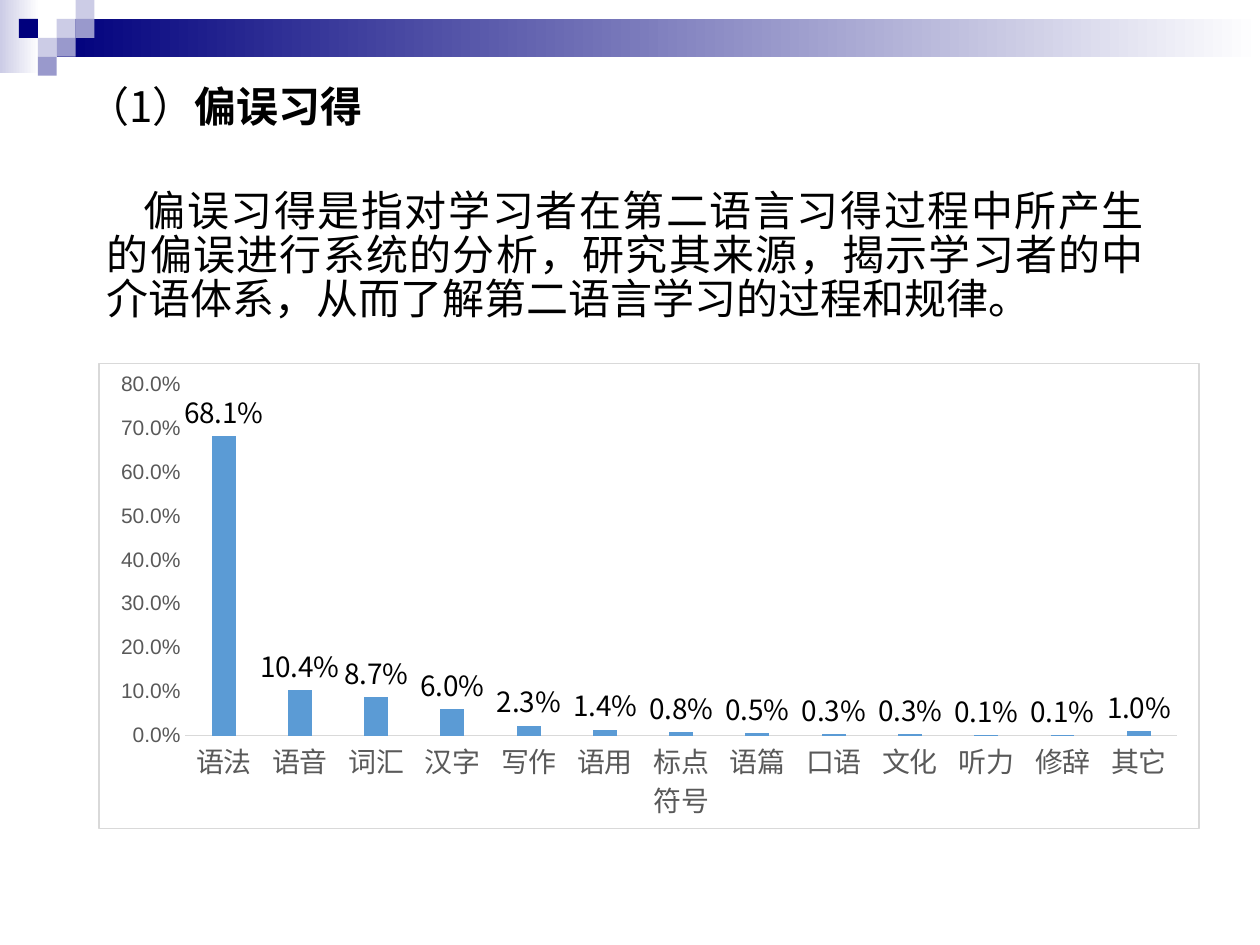
"""Build the slide on error acquisition with its column chart."""
from dataclasses import dataclass

from lxml import etree
from pptx import Presentation
from pptx import util as u
from pptx.chart.data import CategoryChartData
from pptx.dml.color import RGBColor
from pptx.enum import chart as charts, shapes, text
from pptx.oxml import parse_xml
from pptx.oxml.ns import qn


@dataclass(frozen=True)
class Theme:
    navy: str = "00007D"
    violet: str = "9999CC"
    lilac: str = "CCCCE6"
    white: str = "FFFFFF"
    ink: str = "000000"
    grey: str = "595959"
    rule: str = "D9D9D9"
    bar: str = "5B9BD5"
    han: str = "Noto Sans CJK SC"
    latin: str = "Arial"
    serif: str = "Times New Roman"
    body_size: int = 24
    label_size: int = 16
    axis_size: int = 12
    chart_size: int = 10


def style_font(font, size, color, face):
    font.size, font.name = u.Pt(size), face
    font.color.rgb = RGBColor.from_string(color)


def add_text(paragraph, content, *, size, color, face, bold=False):
    run = paragraph.add_run()
    run.text = content
    style_font(run.font, size, color, face)
    run.font.bold = bold
    east_asian = etree.SubElement(run.font._element, qn("a:ea"))
    east_asian.set("typeface", face)


class SlideBuilder:
    def __init__(self, slide, theme):
        self.slide, self.theme = slide, theme

    def rectangle(self, left, top, width, height, color, fade_to=None):
        shape = self.slide.shapes.add_shape(
            shapes.MSO_SHAPE.RECTANGLE, *map(u.Pt, (left, top, width, height)))
        shape.shadow.inherit = False
        shape.line.fill.background()
        if fade_to:
            shape.fill.gradient()
            shape.fill.gradient_angle = 0
            for stop, tone in zip(shape.fill.gradient_stops, (color, fade_to)):
                stop.color.rgb = RGBColor.from_string(tone)
        else:
            shape.fill.solid()
            shape.fill.fore_color.rgb = RGBColor.from_string(color)

    def text_box(self, left, top, width, height, runs, align=None, indent=0, spacing=None):
        box = self.slide.shapes.add_textbox(*map(u.Pt, (left, top, width, height)))
        box.text_frame.word_wrap = True
        paragraph = box.text_frame.paragraphs[0]
        paragraph.alignment = align
        if spacing:
            paragraph.line_spacing = u.Pt(spacing)
        if indent:
            paragraph._p.get_or_add_pPr().set("indent", str(u.Pt(indent)))
        for content, face, bold in runs:
            add_text(paragraph, content, size=self.theme.body_size,
                     color=self.theme.ink, face=face, bold=bold)

    def column_chart(self, left, top, width, height, shares):
        theme = self.theme
        data = CategoryChartData(number_format="0.0%")
        data.categories = list(shares)
        data.add_series("Series 1", list(shares.values()))
        chart = self.slide.shapes.add_chart(
            charts.XL_CHART_TYPE.COLUMN_CLUSTERED,
            *map(u.Pt, (left, top, width, height)), data).chart
        chart.has_legend = chart.has_title = False
        style_font(chart.font, theme.chart_size, theme.ink, theme.latin)
        self.chart_frame(chart)

        category, value = chart.category_axis, chart.value_axis
        for axis, size, face in ((category, theme.label_size, theme.han),
                                 (value, theme.axis_size, theme.latin)):
            axis.major_tick_mark = axis.minor_tick_mark = charts.XL_TICK_MARK.NONE
            axis.has_major_gridlines = False
            style_font(axis.tick_labels.font, size, theme.grey, face)
        category.format.line.color.rgb = RGBColor.from_string(theme.rule)
        category.format.line.width = u.Pt(0.75)
        value.format.line.fill.background()
        value.minimum_scale, value.maximum_scale, value.major_unit = 0, 0.8, 0.1
        value.tick_labels.number_format = "0.0%"
        value.tick_labels.number_format_is_linked = False

        plot = chart.plots[0]
        plot.gap_width, plot.vary_by_categories = 219, False
        series = plot.series[0]
        series.format.fill.solid()
        series.format.fill.fore_color.rgb = RGBColor.from_string(theme.bar)
        labels = series.data_labels
        labels.show_value = True
        labels.position = charts.XL_LABEL_POSITION.OUTSIDE_END
        labels.number_format, labels.number_format_is_linked = "0.0%", False
        style_font(labels.font, theme.label_size, theme.ink, theme.han)

    def chart_frame(self, chart):
        frame = parse_xml(
            '<c:spPr xmlns:c="http://schemas.openxmlformats.org/drawingml/2006/chart" '
            'xmlns:a="http://schemas.openxmlformats.org/drawingml/2006/main">'
            f'<a:solidFill><a:srgbClr val="{self.theme.white}"/></a:solidFill>'
            f'<a:ln w="{u.Pt(0.75)}"><a:solidFill><a:srgbClr val="{self.theme.rule}"/>'
            '</a:solidFill></a:ln></c:spPr>')
        chart.element.find(qn("c:chart")).addnext(frame)


def main():
    theme = Theme()
    presentation = Presentation()
    presentation.slide_width, presentation.slide_height = u.Pt(720), u.Pt(540)
    slide = presentation.slides.add_slide(presentation.slide_layouts[6])
    builder = SlideBuilder(slide, theme)

    builder.rectangle(0, 0, 22.5, 42, theme.lilac, fade_to=theme.white)
    builder.rectangle(32.4, 10.8, 687.6, 21.6, theme.navy, fade_to=theme.white)
    tile = 10.8
    tiles = ((3, 1, theme.lilac), (4, 0, theme.lilac), (4, 1, theme.violet),
             (2, 2, theme.lilac), (1, 1, theme.navy), (3, 2, theme.violet),
             (2, 3, theme.violet))
    for column, row, color in tiles:
        builder.rectangle(column * tile, row * tile, tile, tile, color)

    builder.text_box(
        54, 105.8, 607, 108,
        [("偏误习得是指对学习者在第二语言习得过程中所产生的偏误进行系统的分析，"
          "研究其来源，揭示学习者的中介语体系，从而了解第二语言学习的过程和规律。",
          theme.han, False)],
        align=text.PP_ALIGN.JUSTIFY, indent=21, spacing=25)
    builder.column_chart(56.2, 207.4, 629.3, 266.4, {
        "语法": 0.681, "语音": 0.104, "词汇": 0.087, "汉字": 0.06, "写作": 0.023,
        "语用": 0.014, "标点符号": 0.008, "语篇": 0.005, "口语": 0.003,
        "文化": 0.003, "听力": 0.001, "修辞": 0.001, "其它": 0.01})
    builder.text_box(
        36.7, 42.5, 209.5, 36.7,
        [(" ", theme.serif, False), ("（1）", theme.han, False),
         ("偏误习得", theme.han, True)])
    presentation.save("out.pptx")


if __name__ == "__main__":
    main()
